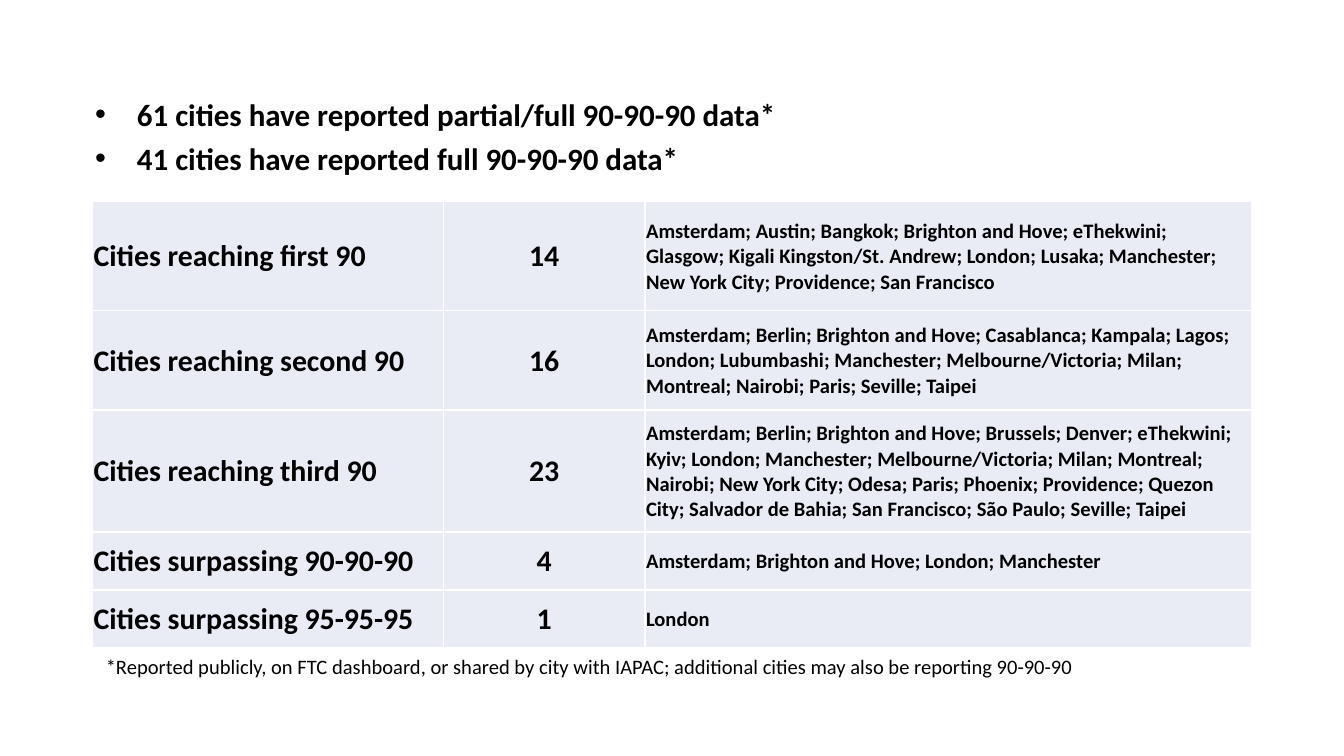
from lxml import etree
from pptx import Presentation
from pptx import util as u
from pptx.dml.color import RGBColor
from pptx.enum import text
from pptx.oxml.ns import qn

# Content
HEADLINES = [
    "61 cities have reported partial/full 90-90-90 data*",
    "41 cities have reported full 90-90-90 data*",
]
# (milestone, number of cities, cities, row height in cm)
MILESTONES = [
    ("Cities reaching first 90", "14",
     "Amsterdam; Austin; Bangkok; Brighton and Hove; eThekwini; Glasgow; "
     "Kigali Kingston/St. Andrew; London; Lusaka; Manchester; New York City; "
     "Providence; San Francisco", 2.06),
    ("Cities reaching second 90", "16",
     "Amsterdam; Berlin; Brighton and Hove; Casablanca; Kampala; Lagos; London; "
     "Lubumbashi; Manchester; Melbourne/Victoria; Milan; Montreal; Nairobi; "
     "Paris; Seville; Taipei", 1.88),
    ("Cities reaching third 90", "23",
     "Amsterdam; Berlin; Brighton and Hove; Brussels; Denver; eThekwini; Kyiv; "
     "London; Manchester; Melbourne/Victoria; Milan; Montreal; Nairobi; "
     "New York City; Odesa; Paris; Phoenix; Providence; Quezon City; "
     "Salvador de Bahia; San Francisco; São Paulo; Seville; Taipei", 2.31),
    ("Cities surpassing 90-90-90", "4",
     "Amsterdam; Brighton and Hove; London; Manchester", 1.09),
    ("Cities surpassing 95-95-95", "1", "London", 1.09),
]
FOOTNOTE = ("*Reported publicly, on FTC dashboard, or shared by city with IAPAC; "
            "additional cities may also be reporting 90-90-90")

THEME = {
    "font": "Calibri", "ink": "000000", "cell": "E9EBF5", "border": "FFFFFF",
    "headline": 16.6, "label": 16, "small": 11,
}
# (width in cm, type size, alignment) of each column
COLUMNS = [
    (6.63, THEME["label"], text.PP_ALIGN.LEFT),
    (3.81, THEME["label"], text.PP_ALIGN.CENTER),
    (11.46, THEME["small"], text.PP_ALIGN.LEFT),
]
LEFT, TABLE_TOP = 1.75, 3.81
TABLE_WIDTH = sum(width for width, _, _ in COLUMNS)
TABLE_HEIGHT = sum(height for *_, height in MILESTONES)


def apply(target, formats):
    for name, value in formats.items():
        setattr(target, name, value)


def write(paragraph, words, size, bold=True):
    run = paragraph.add_run()
    run.text = words
    apply(run.font, {"name": THEME["font"], "size": u.Pt(size), "bold": bold})
    run.font.color.rgb = RGBColor.from_string(THEME["ink"])


def add_bullet(paragraph):
    props = paragraph._p.get_or_add_pPr()
    indent = u.Cm(0.79)
    props.set("marL", str(indent))
    props.set("indent", str(-indent))
    etree.SubElement(props, qn("a:buFont")).set("typeface", "Arial")
    etree.SubElement(props, qn("a:buChar")).set("char", "•")


def add_borders(cell):
    props = cell._tc.get_or_add_tcPr()
    for position, side in enumerate(("lnL", "lnR", "lnT", "lnB")):
        line = etree.Element(qn(f"a:{side}"), w=str(u.Pt(1)))
        fill = etree.SubElement(line, qn("a:solidFill"))
        etree.SubElement(fill, qn("a:srgbClr")).set("val", THEME["border"])
        props.insert(position, line)


def add_text_frame(slide, *box):
    frame = slide.shapes.add_textbox(*map(u.Cm, box)).text_frame
    frame.word_wrap = True
    return frame


deck = Presentation()
apply(deck, {"slide_width": u.Cm(25.4), "slide_height": u.Cm(14.29)})
slide = deck.slides.add_slide(deck.slide_layouts[6])

# Headline bullets
headlines = add_text_frame(slide, 1.55, 1.73, TABLE_WIDTH, 1.73)
headlines.vertical_anchor = text.MSO_ANCHOR.BOTTOM
for i, headline in enumerate(HEADLINES):
    bullet = headlines.add_paragraph() if i else headlines.paragraphs[0]
    add_bullet(bullet)
    apply(bullet, {"line_spacing": 0.8, "space_before": u.Pt(7.5 if i else 0)})
    write(bullet, headline, THEME["headline"])

# Milestone table
milestones = slide.shapes.add_table(
    len(MILESTONES), len(COLUMNS),
    *map(u.Cm, (LEFT, TABLE_TOP, TABLE_WIDTH, TABLE_HEIGHT))).table
apply(milestones, {"first_row": False, "horz_banding": False})
for column, (width, _, _) in zip(milestones.columns, COLUMNS):
    column.width = u.Cm(width)
for row, (*entries, height) in zip(milestones.rows, MILESTONES):
    row.height = u.Cm(height)
    for cell, entry, (_, size, alignment) in zip(row.cells, entries, COLUMNS):
        apply(cell, {
            "margin_left": u.Cm(0.02), "margin_right": u.Cm(0.02),
            "margin_top": u.Cm(0.02), "margin_bottom": 0,
            "vertical_anchor": text.MSO_ANCHOR.MIDDLE,
        })
        cell.fill.solid()
        cell.fill.fore_color.rgb = RGBColor.from_string(THEME["cell"])
        add_borders(cell)
        paragraph = cell.text_frame.paragraphs[0]
        paragraph.alignment = alignment
        write(paragraph, entry, size)

# Footnote
footnote = add_text_frame(slide, LEFT, TABLE_TOP + TABLE_HEIGHT, 22.17, 0.73)
footnote.auto_size = text.MSO_AUTO_SIZE.SHAPE_TO_FIT_TEXT
write(footnote.paragraphs[0], FOOTNOTE, THEME["small"], bold=False)

deck.save("out.pptx")
